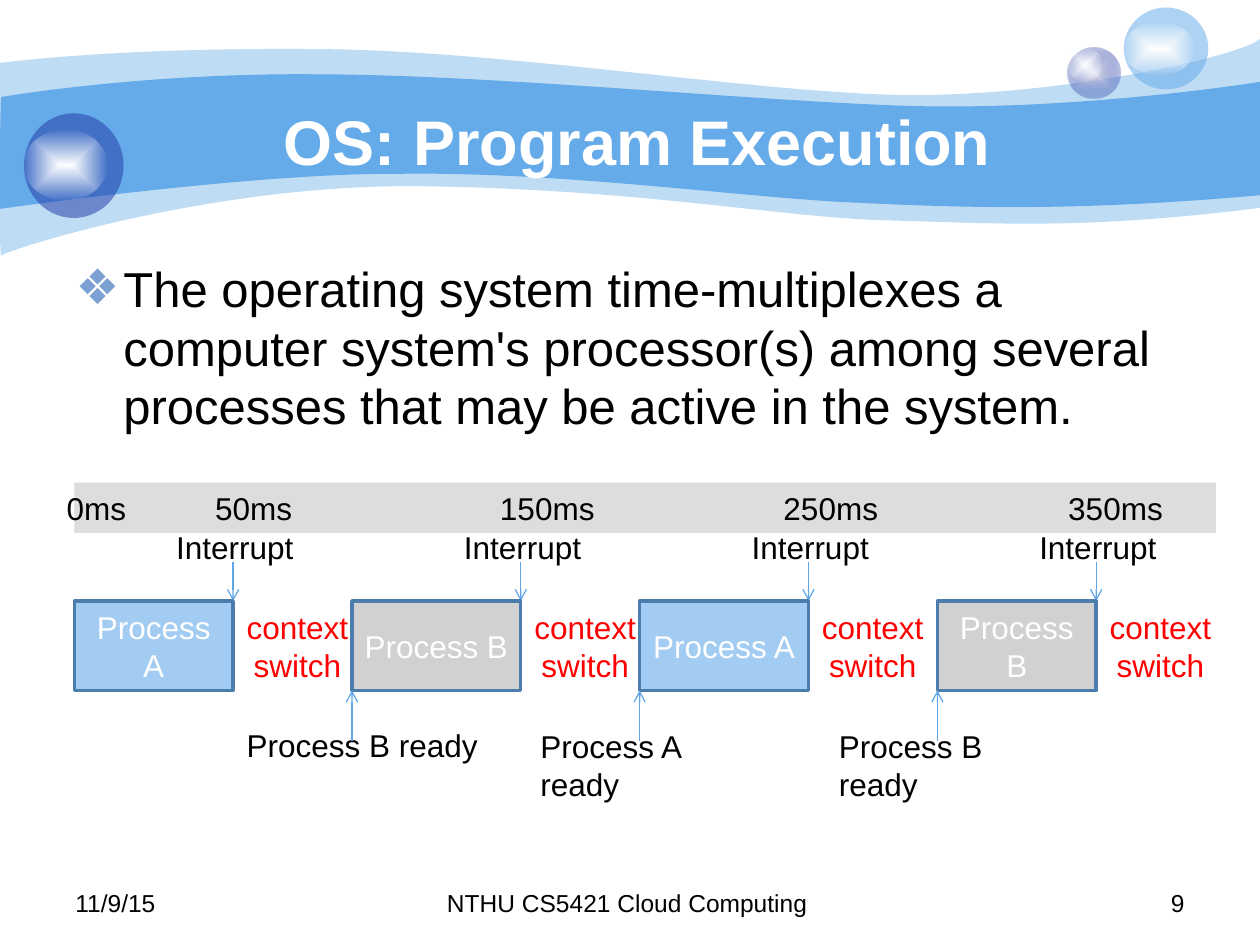
from lxml.etree import SubElement
from pptx import Presentation
from pptx.dml.color import RGBColor
from pptx.enum.shapes import MSO_CONNECTOR, MSO_SHAPE
from pptx.enum.text import MSO_ANCHOR, MSO_AUTO_SIZE, PP_ALIGN
from pptx.oxml import parse_xml
from pptx.oxml.ns import nsdecls, qn
from pptx.util import Inches, Pt

WHITE = RGBColor(0xFF, 0xFF, 0xFF)
BLACK = RGBColor(0x00, 0x00, 0x00)
RED = RGBColor(0xFF, 0x00, 0x00)
SKY = RGBColor(0x65, 0xAA, 0xE9)
NAVY = RGBColor(0x23, 0x3D, 0xA9)
MIST = RGBColor(0xE1, 0xE2, 0xED)
BULLET = RGBColor(0x7D, 0xA0, 0xD3)
BAR = RGBColor(0xDD, 0xDD, 0xDD)
BLUE = RGBColor(0xA3, 0xCC, 0xF2)
GRAY = RGBColor(0xD1, 0xD1, 0xD1)
EDGE = RGBColor(0x4B, 0x7E, 0xAC)
ARROW = RGBColor(0x60, 0xA6, 0xE7)
FONT = "Arial"

TITLE = "OS: Program Execution"
BODY = ("The operating system time-multiplexes a computer system's processor(s) "
        "among several processes that may be active in the system.")
TIMES = ["0ms", "50ms", "150ms", "250ms", "350ms"]
TAB_STOPS = [1.18, 3.44, 5.69, 7.95]
PROCESSES = [("Process A", BLUE, 1.26, "context\vswitch"),
             ("Process B", GRAY, 1.34, "context switch"),
             ("Process A", BLUE, 1.34, "context switch"),
             ("Process B", GRAY, 1.26, "context switch")]
READY = [("Process B ready", 1.85, 5.71, 2.05, PP_ALIGN.CENTER),
         ("Process A ready", 4.19, 5.72, 1.83, PP_ALIGN.LEFT),
         ("Process B ready", 6.56, 5.72, 1.83, PP_ALIGN.LEFT)]
FOOTERS = [("11/9/15", 0.5, 2.33, PP_ALIGN.LEFT),
           ("9", 7.17, 2.33, PP_ALIGN.RIGHT),
           ("NTHU CS5421 Cloud Computing ", 3.42, 3.17, PP_ALIGN.CENTER)]

OUTER_WAVE = [
    (0, 0.5), (0.24, 0.47, 1.07, 0.38, 2.47, 0.39), (3.86, 0.39, 5.75, 0.7, 6.99, 0.75),
    (8.22, 0.8, 9.8, 0.47, 10, 0.31), (10, 1.65), (8.58, 1.83, 7.87, 1.77, 7.05, 1.75),
    (6.22, 1.73, 5.15, 1.51, 3.43, 1.48), (1.72, 1.44, 0.04, 1.99, 0.01, 2.03),
    (-0.01, 2.08, 0, 0.75, 0, 0.5)]
INNER_WAVE = [
    (0.01, 0.77), (0.02, 0.77, 1.1, 0.58, 2.48, 0.59), (3.86, 0.59, 5.95, 0.8, 7.18, 0.84),
    (8.41, 0.88, 9.76, 0.69, 10, 0.65), (10, 1.55), (8.53, 1.68, 7.65, 1.65, 6.82, 1.61),
    (5.99, 1.58, 4.47, 1.36, 3.17, 1.38), (2.03, 1.37, -0.02, 1.66, -0.01, 1.66),
    (0, 1.66, 0, 0.77, 0.01, 0.77)]
GLOW = [(WHITE, 100), (WHITE, 0)]
BUBBLES = [
    (8.47, 0.38, 0.42, 0.4, [(MIST, 100), (NAVY, 31)]), (8.47, 0.38, 0.28, 0.27, GLOW),
    (8.92, 0.06, 0.67, 0.65, [(SKY, 53)]), (8.92, 0.17, 0.56, 0.43, GLOW),
    (0.19, 0.9, 0.79, 0.83, [(NAVY, 53)]), (0.19, 1.03, 0.66, 0.56, GLOW)]

ROW_TOP, ROW_HEIGHT = 4.77, 0.71
FIRST_END, STEP = 1.85, 6.85 / 3


def paint(shape, stops):
    shape.shadow.inherit = False
    shape.line.fill.background()
    if len(stops) == 1:
        color, opacity = stops[0]
        shape.fill.solid()
        shape.fill.fore_color.rgb = color
        if opacity < 100:
            node = shape.element.spPr.find(qn("a:solidFill"))[0]
            SubElement(node, qn("a:alpha"), val=str(opacity * 1000))
        return
    shape.fill.background()
    marks = "".join(
        f'<a:gs pos="{index * 100000}"><a:srgbClr val="{color}">'
        f'<a:alpha val="{opacity * 1000}"/></a:srgbClr></a:gs>'
        for index, (color, opacity) in enumerate(stops))
    gradient = parse_xml(
        f'<a:gradFill {nsdecls("a")}><a:gsLst>{marks}</a:gsLst><a:path path="shape">'
        '<a:fillToRect l="50000" t="50000" r="50000" b="50000"/></a:path></a:gradFill>')
    properties = shape.element.spPr
    properties.replace(properties.find(qn("a:noFill")), gradient)


def add_wave(page, parts, opacity):
    start, *rest = [[(Inches(x), Inches(y)) for x, y in zip(part[::2], part[1::2])]
                    for part in parts]
    builder = page.shapes.build_freeform(*start[0], scale=1.0)
    builder.add_line_segments([point for points in rest for point in points], close=True)
    wave = builder.convert_to_shape()
    segments = iter(list(wave.element.iter(qn("a:lnTo"))))
    for points in rest:
        steps = [next(segments) for _ in points]
        if len(steps) == 3:
            curve = parse_xml(f'<a:cubicBezTo {nsdecls("a")}/>')
            steps[0].addprevious(curve)
            for step in steps:
                curve.append(step[0])
                step.getparent().remove(step)
    paint(wave, [(SKY, opacity)])


def write(shape, text, align=PP_ALIGN.LEFT, anchor=MSO_ANCHOR.TOP, wrap=True):
    frame = shape.text_frame
    frame.word_wrap = wrap
    frame.auto_size = MSO_AUTO_SIZE.NONE if wrap else MSO_AUTO_SIZE.SHAPE_TO_FIT_TEXT
    frame.vertical_anchor = anchor
    frame.text = text
    para = frame.paragraphs[0]
    para.alignment = align
    para.space_before = Pt(0)
    return para


def set_font(para, size, color, bold=False):
    para.font.name = FONT
    para.font.size = Pt(size)
    para.font.color.rgb = color
    para.font.bold = bold


def label(page, text, area, size=18, color=BLACK, **layout):
    box = page.shapes.add_textbox(*map(Inches, area))
    set_font(write(box, text, **layout), size, color)


def add_box(page, area, fill):
    box = page.shapes.add_shape(MSO_SHAPE.RECTANGLE, *map(Inches, area))
    paint(box, [(fill, 100)])
    return box


def add_arrow(page, x, start, end):
    arrow = page.shapes.add_connector(
        MSO_CONNECTOR.STRAIGHT, Inches(x), Inches(start), Inches(x), Inches(end))
    arrow.line.color.rgb = ARROW
    arrow.line.width = Pt(0.75)
    properties = arrow.element.spPr
    SubElement(properties.find(qn("a:ln")), qn("a:tailEnd"), type="arrow")
    SubElement(properties, qn("a:effectLst"))


def place(page, holder, area):
    holder.left, holder.top, holder.width, holder.height = map(Inches, area)
    page.shapes.element.append(holder.element)


def add_headings(page):
    title, body = page.shapes.title, page.placeholders[1]
    place(page, title, (1.06, 0.68, 8, 0.87))
    para = write(title, TITLE, PP_ALIGN.CENTER, MSO_ANCHOR.MIDDLE)
    set_font(para, 36, WHITE, bold=True)

    place(page, body, (0.5, 2, 9, 1.67))
    para = write(body, BODY)
    properties = para._p.get_or_add_pPr()
    properties.set("marL", str(Inches(0.38)))
    properties.set("indent", str(Inches(-0.38)))
    color = SubElement(properties, qn("a:buClr"))
    SubElement(color, qn("a:srgbClr"), val=str(BULLET))
    SubElement(properties, qn("a:buChar"), char="❖")
    set_font(para, 28, BLACK)


def add_time_labels(page):
    box = page.shapes.add_textbox(*map(Inches, (0.43, 3.83, 9.06, 0.4)))
    para = write(box, "\t".join(TIMES))
    tabs = SubElement(para._p.get_or_add_pPr(), qn("a:tabLst"))
    for stop in TAB_STOPS:
        SubElement(tabs, qn("a:tab"), pos=str(Inches(stop)), algn="l")
    set_font(para, 18, BLACK)


def add_processes(page):
    ends = [FIRST_END + index * STEP for index in range(len(PROCESSES))]
    for index, end in enumerate(ends):
        add_arrow(page, end, 4.46, ROW_TOP)
        label(page, "Interrupt", (end - 0.55, 4.14, 1.13, 0.4), wrap=False)
        if index == 0:
            add_box(page, (0.59, 3.83, 9.06, 0.4), BAR)
    for end, (name, fill, width, change) in zip(ends, PROCESSES):
        box = add_box(page, (end - width, ROW_TOP, width, ROW_HEIGHT), fill)
        box.line.color.rgb = EDGE
        box.line.width = Pt(2)
        set_font(write(box, name, PP_ALIGN.CENTER, MSO_ANCHOR.MIDDLE), 18, WHITE)
        label(page, change, (end, ROW_TOP, 1.02, ROW_HEIGHT),
              color=RED, align=PP_ALIGN.CENTER, anchor=MSO_ANCHOR.MIDDLE)
    add_time_labels(page)
    for end, process, ready in zip(ends[1:], PROCESSES[1:], READY):
        text, left, top, width, align = ready
        label(page, text, (left, top, width, 0.4), align=align)
        add_arrow(page, end - process[2], 5.88, ROW_TOP + ROW_HEIGHT)


def main():
    deck = Presentation()
    deck.slide_width, deck.slide_height = Inches(10), Inches(7.5)
    page = deck.slides.add_slide(deck.slide_layouts[1])
    add_wave(page, OUTER_WAVE, 41)
    add_wave(page, INNER_WAVE, 100)
    for *area, stops in BUBBLES:
        paint(page.shapes.add_shape(MSO_SHAPE.OVAL, *map(Inches, area)), stops)
    add_headings(page)
    for text, left, width, align in FOOTERS:
        label(page, text, (left, 7, width, 0.35), size=14, align=align)
    add_processes(page)
    deck.save("out.pptx")


if __name__ == "__main__":
    main()
